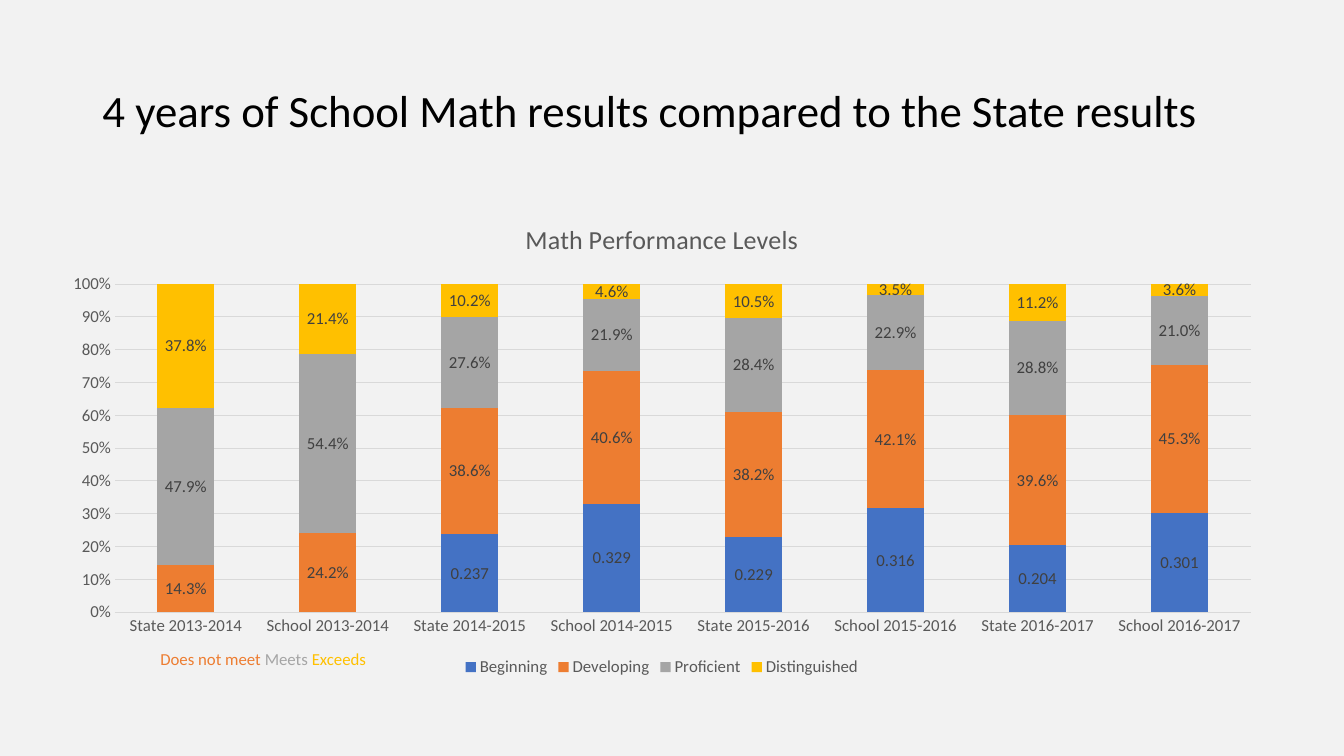
from lxml.etree import SubElement
from pptx import Presentation
from pptx.chart.data import CategoryChartData
from pptx.dml.color import RGBColor
from pptx.enum.chart import (XL_CHART_TYPE as ChartType, XL_LABEL_POSITION as LabelPosition,
                             XL_LEGEND_POSITION as LegendPosition, XL_TICK_MARK as TickMark)
from pptx.enum.text import MSO_ANCHOR as Anchor, MSO_AUTO_SIZE as AutoSize, PP_ALIGN as Align
from pptx.oxml.ns import qn
from pptx.util import Inches, Pt

COLORS = {
    "background": "F2F2F2", "title": "000000", "axis": "595959", "label": "404040",
    "grid": "D9D9D9", "Beginning": "4472C4", "Developing": "ED7D31",
    "Proficient": "A5A5A5", "Distinguished": "FFC000",
}
FONT = "Calibri"
COLUMNS, ROWS = 160, 90

SCHOOL = "School"
YEARS = ["2013-2014", "2014-2015", "2015-2016", "2016-2017"]
CATEGORIES = [f"{group} {year}" for year in YEARS for group in ("State", SCHOOL)]
LEVELS = {
    "Beginning": [None, None, 0.237, 0.329, 0.229, 0.316, 0.204, 0.301],
    "Developing": [0.143, 0.242, 0.386, 0.406, 0.382, 0.421, 0.396, 0.453],
    "Proficient": [0.479, 0.544, 0.276, 0.219, 0.284, 0.229, 0.288, 0.21],
    "Distinguished": [0.378, 0.214, 0.102, 0.046, 0.105, 0.035, 0.112, 0.036],
}
PLOT_SHARES = {"x": 0.054, "y": 0.172, "w": 0.926, "h": 0.684}


def rgb(name):
    return RGBColor.from_string(COLORS[name])


def format_font(font, size=12, color="axis"):
    font.name = FONT
    font.size = Pt(size)
    font.bold = False
    font.color.rgb = rgb(color)


def add_text(paragraph, text, **font_format):
    run = paragraph.add_run()
    run.text = text
    format_font(run.font, **font_format)


def format_line(line):
    line.color.rgb = rgb("grid")
    line.width = Pt(0.75)


def place_plot(chart, shares):
    """Fix the inner plot area at shares of the chart's size."""
    plot_area = chart.element.find(".//" + qn("c:plotArea"))
    for old_layout in plot_area.findall(qn("c:layout")):
        plot_area.remove(old_layout)
    layout = SubElement(plot_area, qn("c:layout"))
    plot_area.insert(0, layout)
    manual = SubElement(layout, qn("c:manualLayout"))
    settings = {"layoutTarget": "inner", "xMode": "edge", "yMode": "edge", **shares}
    for tag, value in settings.items():
        SubElement(manual, qn(f"c:{tag}")).set("val", str(value))


class SlideBuilder:
    def __init__(self, presentation):
        self.column = presentation.slide_width / COLUMNS
        self.row = presentation.slide_height / ROWS
        self.slide = presentation.slides.add_slide(presentation.slide_layouts[5])
        fill = self.slide.background.fill
        fill.solid()
        fill.fore_color.rgb = rgb("background")

    def box(self, left, top, width, height):
        """Turn grid columns and rows into lengths."""
        return (round(left * self.column), round(top * self.row),
                round(width * self.column), round(height * self.row))

    def title(self, text, *cells):
        shape = self.slide.shapes.title
        shape.left, shape.top, shape.width, shape.height = self.box(*cells)
        frame = shape.text_frame
        frame.auto_size = AutoSize.NONE
        frame.vertical_anchor = Anchor.MIDDLE
        paragraph = frame.paragraphs[0]
        paragraph.alignment = Align.LEFT
        paragraph.line_spacing = 0.9
        add_text(paragraph, text, size=32, color="title")

    def text(self, parts, *cells):
        frame = self.slide.shapes.add_textbox(*self.box(*cells)).text_frame
        frame.word_wrap = True
        frame.auto_size = AutoSize.SHAPE_TO_FIT_TEXT
        for text, color in parts:
            add_text(frame.paragraphs[0], text, color=color)

    def stacked_chart(self, title, *cells):
        data = CategoryChartData()
        data.categories = CATEGORIES
        for name, values in LEVELS.items():
            data.add_series(name, values, "General" if name == "Beginning" else "0.0%")
        chart = self.slide.shapes.add_chart(
            ChartType.COLUMN_STACKED, *self.box(*cells), data).chart
        format_font(chart.font, size=10, color="title")
        chart.has_title = True
        add_text(chart.chart_title.text_frame.paragraphs[0], title, size=18.6)
        chart.chart_title.include_in_layout = False
        chart.has_legend = True
        chart.legend.position = LegendPosition.BOTTOM
        chart.legend.include_in_layout = False
        format_font(chart.legend.font)
        self.format_axes(chart)
        self.format_series(chart.plots[0])
        place_plot(chart, PLOT_SHARES)

    def format_axes(self, chart):
        for axis in (chart.category_axis, chart.value_axis):
            axis.major_tick_mark = axis.minor_tick_mark = TickMark.NONE
            format_font(axis.tick_labels.font)
        format_line(chart.category_axis.format.line)
        values = chart.value_axis
        values.minimum_scale, values.maximum_scale, values.major_unit = 0, 1, 0.1
        values.format.line.fill.background()
        values.tick_labels.number_format = "0%"
        values.tick_labels.number_format_is_linked = False
        format_line(values.major_gridlines.format.line)

    def format_series(self, plot):
        plot.gap_width, plot.overlap = 150, 100
        plot.vary_by_categories = False
        for series in plot.series:
            fill = series.format.fill
            fill.solid()
            fill.fore_color.rgb = rgb(series.name)
            labels = series.data_labels
            labels.show_value = True
            labels.position = LabelPosition.CENTER
            labels.number_format = "General" if series.name == "Beginning" else "0.0%"
            labels.number_format_is_linked = False
            format_font(labels.font, color="label")


def main():
    presentation = Presentation()
    presentation.slide_width, presentation.slide_height = Inches(13.33), Inches(7.5)
    builder = SlideBuilder(presentation)
    builder.title(f"4 years of {SCHOOL} Math results compared to the State results",
                  11, 4.8, 138, 17.4)
    builder.stacked_chart("Math Performance Levels", 5.8, 24, 146, 57.1)
    builder.text([("Does not meet ", "Developing"), ("Meets ", "Proficient"),
                  ("Exceeds", "Distinguished")], 17.9, 76.6, 27.7, 3.6)
    presentation.save("out.pptx")


if __name__ == "__main__":
    main()
